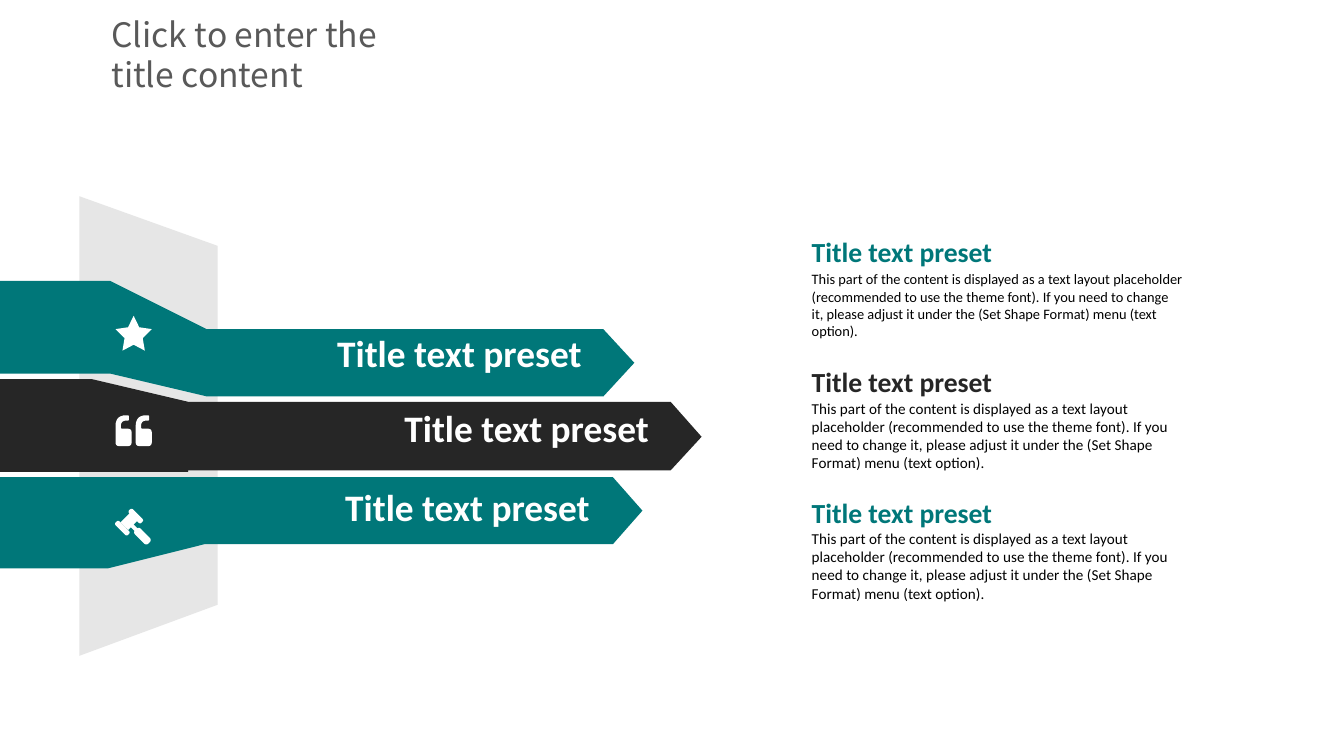
from pptx import Presentation
from pptx import util as u
from pptx.dml.color import RGBColor
from pptx.enum import shapes, text

TEAL, DARK, WHITE = "007779", "262626", "FFFFFF"
HEADING = "Title text preset"
BODY = (
    "This part of the content is displayed as a text layout placeholder "
    "(recommended to use the theme font). If you need to change it, please "
    "adjust it under the (Set Shape Format) menu (text option)."
)


def color(value):
    return RGBColor.from_string(value)


def paint(shape, fill):
    shape.shadow.inherit = False
    shape.fill.solid()
    shape.fill.fore_color.rgb = color(fill)
    shape.line.fill.background()


def add_outline(slide, left, top, contours, fill):
    placed = [
        [(u.Inches(left + x), u.Inches(top + y)) for x, y in contour]
        for contour in contours
    ]
    builder = slide.shapes.build_freeform(*placed[0][0])
    builder.add_line_segments(placed[0][1:])
    for contour in placed[1:]:
        builder.move_to(*contour[0])
        builder.add_line_segments(contour[1:])
    shape = builder.convert_to_shape()
    paint(shape, fill)
    return shape


def write(shape, content, size, fill, insets, anchor, bold=False, font="Calibri"):
    frame = shape.text_frame
    frame.word_wrap = True
    frame.vertical_anchor = anchor
    frame.margin_left, frame.margin_top, frame.margin_right, frame.margin_bottom = map(
        u.Inches, insets
    )
    paragraph = frame.paragraphs[0]
    paragraph.text = content
    paragraph.font.name = font
    paragraph.font.size = u.Pt(size)
    paragraph.font.bold = bold
    paragraph.font.color.rgb = color(fill)
    return paragraph


def add_text(slide, box, *args, **options):
    return write(slide.shapes.add_textbox(*map(u.Inches, box)), *args, **options)


def add_ribbon(slide, left, top, points, fill, anchor, bottom_inset):
    ribbon = add_outline(slide, left, top, [points], fill)
    insets = (0.05, 0.05, 0.39, bottom_inset)
    paragraph = write(ribbon, HEADING, 20, WHITE, insets, anchor, bold=True)
    paragraph.alignment = text.PP_ALIGN.RIGHT


def add_star(slide, left, top):
    star = slide.shapes.add_shape(
        shapes.MSO_SHAPE.STAR_5_POINT,
        *map(u.Inches, (left, top, 0.27, 0.26)),
    )
    star.adjustments[0] = 0.25
    paint(star, WHITE)


def add_quotes(slide, left, top):
    corners = [
        ((0.12, 0.2), (0.12, 0.23), (0.09, 0.23)),
        ((0.03, 0.23), (0, 0.23), (0, 0.2)),
        ((0, 0.08), (0, 0), (0.08, 0)),
        ((0.09, 0), (0.1, 0), (0.1, 0.01)),
        ((0.1, 0.03), (0.1, 0.04), (0.09, 0.04)),
        ((0.08, 0.04), (0.04, 0.04), (0.04, 0.08)),
        ((0.04, 0.09), (0.04, 0.1), (0.05, 0.1)),
        ((0.09, 0.1), (0.12, 0.1), (0.12, 0.13)),
    ]
    steps = [step / 6 for step in range(7)]
    mark = [
        tuple(
            (1 - t) ** 2 * a + 2 * t * (1 - t) * b + t**2 * c
            for a, b, c in zip(start, corner, end)
        )
        for start, corner, end in corners
        for t in steps
    ]
    marks = [[(x + offset, y) for x, y in mark] for offset in (0, 0.15)]
    add_outline(slide, left, top, marks, WHITE)


def add_gavel(slide, left, top):
    rounded, square = shapes.MSO_SHAPE.ROUNDED_RECTANGLE, shapes.MSO_SHAPE.RECTANGLE
    parts = [
        (square, 0.1, 0.09, 0.08, 0.1),
        (rounded, 0.15, 0.05, 0.13, 0.04),
        (rounded, 0.05, 0.14, 0.13, 0.04),
        (square, 0.14, 0.14, 0.1, 0.03),
        (rounded, 0.2, 0.2, 0.14, 0.06),
    ]
    for kind, x, y, width, height in parts:
        part = slide.shapes.add_shape(
            kind,
            u.Inches(left + x - width / 2),
            u.Inches(top + y - height / 2),
            u.Inches(width),
            u.Inches(height),
        )
        if kind == rounded:
            part.adjustments[0] = 0.35
        part.rotation = 45
        paint(part, WHITE)


def add_ribbons(slide, left, top):
    panel = [(0, 0), (1.03, 0.37), (1.03, 3.04), (0, 3.42)]
    add_outline(slide, left, top, [panel], "E6E6E6")
    lower = [(0, 0), (0, 0.68), (0.94, 0.68), (1.66, 0.5), (4.7, 0.5),
             (4.92, 0.25), (4.7, 0)]
    middle = [(0, 0), (0, 0.69), (1.66, 0.69), (1.66, 0.68), (5.25, 0.68),
              (5.48, 0.43), (5.25, 0.17), (1.66, 0.17), (0.94, 0)]
    upper = [(0, 0), (0, 0.69), (0.94, 0.69), (1.66, 0.86), (4.61, 0.86),
             (4.84, 0.61), (4.61, 0.36), (1.66, 0.36), (0.94, 0)]
    high, low = text.MSO_ANCHOR.TOP, text.MSO_ANCHOR.BOTTOM
    add_ribbon(slide, left - 0.73, top + 2.09, lower, TEAL, high, 0.05)
    add_ribbon(slide, left - 0.85, top + 1.36, middle, DARK, low, 0.16)
    add_ribbon(slide, left - 0.71, top + 0.63, upper, TEAL, low, 0.16)
    icon_left = left + 0.27
    add_star(slide, icon_left, top + 0.89)
    add_quotes(slide, icon_left, top + 1.63)
    add_gavel(slide, icon_left, top + 2.33)


def add_descriptions(slide, left, top, width):
    insets, middle = (0.39, 0, 0.32, 0), text.MSO_ANCHOR.MIDDLE
    for index, (fill, size) in enumerate([(TEAL, 7.7), (DARK, 8.1), (TEAL, 8.1)]):
        y = top + index * 0.97
        add_text(slide, (left, y, width, 0.24), HEADING, 14.8, fill, insets,
                 middle, bold=True)
        add_text(slide, (left, y + 0.24, width, 0.56), BODY, size, "000000",
                 insets, middle)


def add_title(slide, box):
    add_text(
        slide, box, "Click to enter the title content", 18, "595959",
        (0, 0.05, 0, 0.05), text.MSO_ANCHOR.MIDDLE, font="Noto Sans CJK SC",
    )


def main():
    presentation = Presentation()
    presentation.slide_width = u.Inches(10)
    presentation.slide_height = presentation.slide_width * 9 // 16
    slide = presentation.slides.add_slide(presentation.slide_layouts[6])
    add_ribbons(slide, 0.59, 1.46)
    add_descriptions(slide, 5.65, 1.75, 3.47)
    add_title(slide, (0.83, 0.19, 2.33, 0.42))
    presentation.save("out.pptx")


if __name__ == "__main__":
    main()
